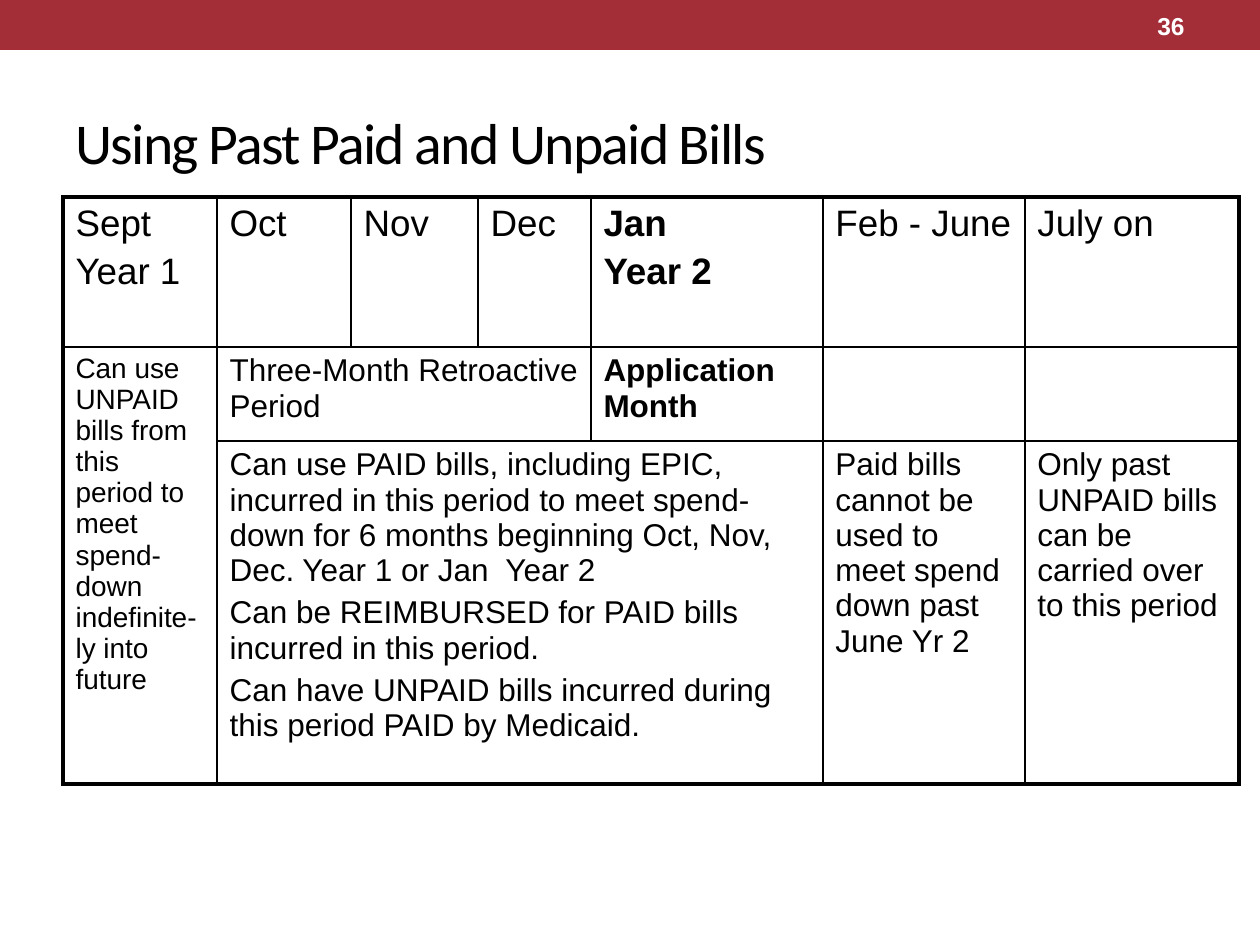
from dataclasses import dataclass

from lxml import etree
from pptx import Presentation
from pptx.dml.color import RGBColor
from pptx.enum.shapes import MSO_SHAPE
from pptx.enum.text import MSO_ANCHOR, PP_ALIGN
from pptx.oxml.ns import qn
from pptx.util import Emu, Pt

PX_PER_INCH = 126
BLACK = RGBColor(0x00, 0x00, 0x00)
WHITE = RGBColor(0xFF, 0xFF, 0xFF)
RED = RGBColor(0xA3, 0x2E, 0x37)
RECTANGLE = MSO_SHAPE.RECTANGLE
MIDDLE = MSO_ANCHOR.MIDDLE
LEFT, RIGHT = PP_ALIGN.LEFT, PP_ALIGN.RIGHT
NO_STYLE = "{2D5ABB26-0587-4C30-8999-92F81FD0307C}"
OUTER, INNER = Pt(2.25), Pt(1)

COL_WIDTHS = (154, 134, 127, 113, 232, 202, 214)
ROW_HEIGHTS = (150, 94, 343)


@dataclass(frozen=True)
class Style:
    size: int
    font: str = "Arial"
    color: RGBColor = BLACK
    bold: bool = False
    spacing: int = 0  # hundredths of a point


@dataclass(frozen=True)
class Entry:
    row: int
    col: int
    paragraphs: tuple[str, ...]
    style: Style
    row_span: int = 1
    col_span: int = 1


HEADER, HEADER_BOLD = Style(21), Style(21, bold=True)
BODY, BODY_BOLD = Style(18), Style(18, bold=True)
NARROW = Style(16)

ENTRIES = (
    Entry(0, 0, ("Sept", "Year 1"), HEADER),
    Entry(0, 1, ("Oct",), HEADER),
    Entry(0, 2, ("Nov",), HEADER),
    Entry(0, 3, ("Dec",), HEADER),
    Entry(0, 4, ("Jan", "Year 2"), HEADER_BOLD),
    Entry(0, 5, ("Feb - June",), HEADER),
    Entry(0, 6, ("July on",), HEADER),
    Entry(1, 0, ("Can use UNPAID bills from this period to meet spend-down "
                 "indefinite-ly into future",), NARROW, row_span=2),
    Entry(1, 1, ("Three-Month Retroactive Period",), BODY, col_span=3),
    Entry(1, 4, ("Application Month",), BODY_BOLD),
    Entry(1, 5, (), BODY),
    Entry(1, 6, (), BODY),
    Entry(2, 1, (
        "Can use PAID bills, including EPIC, incurred in this period to meet "
        "spend-down for 6 months beginning Oct, Nov, Dec. Year 1 or Jan  Year 2",
        "Can be REIMBURSED for PAID bills incurred in this period.",
        "Can have UNPAID bills incurred during this period PAID by Medicaid.",
    ), BODY, col_span=4),
    Entry(2, 5, ("Paid bills cannot be used to meet spend down past June Yr 2",), BODY),
    Entry(2, 6, ("Only past UNPAID bills can be carried over to this period",), BODY),
)


def px(n: int) -> Emu:
    return Emu(round(n * 914400 / PX_PER_INCH))


def write(tf, paragraphs: tuple[str, ...], style: Style, align=LEFT) -> None:
    tf.word_wrap = True
    for i, text in enumerate(paragraphs):
        p = tf.add_paragraph() if i else tf.paragraphs[0]
        p.alignment = align
        if i:
            p.space_before = Pt(4)
        r = p.add_run()
        r.text = text
        r.font.size = Pt(style.size)
        r.font.name = style.font
        r.font.bold = style.bold
        r.font.color.rgb = style.color
        if style.spacing:
            r._r.get_or_add_rPr().set("spc", str(style.spacing))


def add_text(slide, box: tuple[int, int, int, int], text: str, style: Style, align=LEFT) -> None:
    tf = slide.shapes.add_textbox(*map(px, box)).text_frame
    tf.vertical_anchor = MIDDLE
    write(tf, (text,), style, align)


def set_borders(cell, entry: Entry) -> None:
    """Draw the table's outer edges thick and the inner ones thin."""
    on_edge = {
        "lnL": entry.col == 0,
        "lnR": entry.col + entry.col_span == len(COL_WIDTHS),
        "lnT": entry.row == 0,
        "lnB": entry.row + entry.row_span == len(ROW_HEIGHTS),
    }
    tc_pr = cell._tc.get_or_add_tcPr()
    for tag, outer in on_edge.items():
        ln = etree.SubElement(tc_pr, qn(f"a:{tag}"), w=str(OUTER if outer else INNER))
        fill = etree.SubElement(ln, qn("a:solidFill"))
        etree.SubElement(fill, qn("a:srgbClr"), val=str(BLACK))


def add_bill_table(slide) -> None:
    frame = slide.shapes.add_table(
        len(ROW_HEIGHTS), len(COL_WIDTHS),
        px(63), px(197), px(sum(COL_WIDTHS)), px(sum(ROW_HEIGHTS)))
    table = frame.table
    table.first_row = table.horz_banding = False
    table._tbl.tblPr.find(qn("a:tableStyleId")).text = NO_STYLE
    for column, width in zip(table.columns, COL_WIDTHS):
        column.width = px(width)
    for row, height in zip(table.rows, ROW_HEIGHTS):
        row.height = px(height)
    for entry in ENTRIES:
        cell = table.cell(entry.row, entry.col)
        if entry.row_span > 1 or entry.col_span > 1:
            cell.merge(table.cell(entry.row + entry.row_span - 1,
                                  entry.col + entry.col_span - 1))
        set_borders(cell, entry)
        write(cell.text_frame, entry.paragraphs, entry.style)
    for cell in table.iter_cells():
        cell.fill.background()


def main() -> None:
    prs = Presentation()
    prs.slide_width, prs.slide_height = px(1260), px(945)
    slide = prs.slides.add_slide(prs.slide_layouts[6])

    band = slide.shapes.add_shape(RECTANGLE, 0, 0, px(1260), px(50))
    band.shadow.inherit = False
    band.fill.solid()
    band.fill.fore_color.rgb = RED
    band.line.fill.background()

    add_text(slide, (1050, 3, 147, 45), "36", Style(14, color=WHITE, bold=True), RIGHT)
    add_text(slide, (63, 73, 1134, 136), "Using Past Paid and Unpaid Bills",
             Style(33, font="Calibri", spacing=-100))
    add_bill_table(slide)
    prs.save("out.pptx")


if __name__ == "__main__":
    main()
